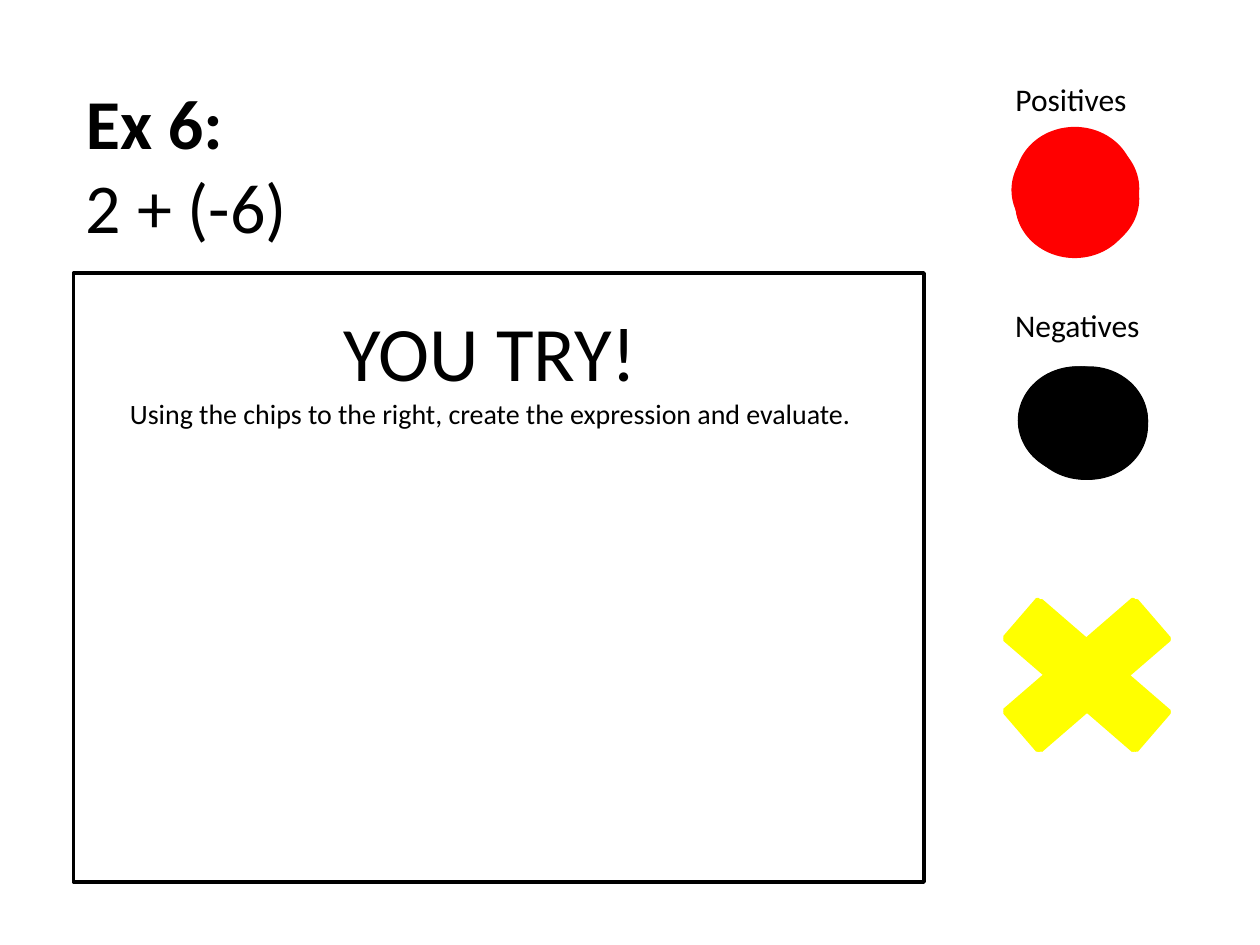
from dataclasses import dataclass
from typing import NamedTuple

from pptx import Presentation
from pptx.dml.color import RGBColor as Rgb
from pptx.enum.shapes import MSO_SHAPE as Kind
from pptx.enum.text import PP_ALIGN as Align
from pptx.util import Inches, Pt

CELL = 1 / 12  # inches: the slide is a grid of 120 columns by 90 rows


@dataclass(frozen=True)
class Theme:
    font: str = "Calibri"
    ink: str = "000000"
    plus: str = "FF0000"
    minus: str = "000000"
    cross: str = "FFFF00"
    line: int = 2
    head: int = 40
    call: int = 44
    label: int = 18
    note: int = 16


class Box(NamedTuple):
    """A rectangle in grid cells."""
    x: float
    y: float
    w: float
    h: float

    def inner(self, x, y, w, h):
        return Box(self.x + x, self.y + y, w, h)

    def shift(self, x, y):
        """Move by hundredths of an inch."""
        return self.inner(x / 100 / CELL, y / 100 / CELL, self.w, self.h)

    def emu(self):
        return [Inches(n * CELL) for n in self]


THEME = Theme()
# Strays of each stacked piece from its pile's corner, in hundredths of an inch
REDS = [(3, 14), (7, 14), (6, 7), (3, 0), (3, 10), (7, 6),
        (5, 10), (3, 18), (3, 17), (5, 11), (0, 7), (2, 9)]
BLACKS = [(7, 1), (2, 0), (0, 0), (9, 4), (6, 4), (9, 1), (9, 0), (2, 1)]
CROSSES = [(3, 1), (3, 2), (1, 2), (0, 0), (0, 2)]


def add_text(slide, box, lines, align=Align.LEFT):
    """Write lines of (words, size, bold), one paragraph each."""
    frame = slide.shapes.add_textbox(*box.emu()).text_frame
    frame.word_wrap = True
    for i, (words, size, bold) in enumerate(lines):
        para = frame.add_paragraph() if i else frame.paragraphs[0]
        para.text = words
        para.alignment = align
        font = para.font
        font.name, font.size, font.bold = THEME.font, Pt(size), bold
        font.color.rgb = Rgb.from_string(THEME.ink)


def add_form(slide, kind, box, line, fill=None):
    form = slide.shapes.add_shape(kind, *box.emu())
    form.shadow.inherit = False
    form.line.color.rgb = Rgb.from_string(line)
    form.line.width = Pt(THEME.line)
    if fill:
        form.fill.solid()
        form.fill.fore_color.rgb = Rgb.from_string(fill)
    else:
        form.fill.background()
    return form


def add_pile(slide, kind, box, color, strays):
    """Stack pieces that can be dragged off one by one."""
    return [add_form(slide, kind, box.shift(*stray), color, color)
            for stray in strays]


def add_head(slide, box):
    add_text(slide, box, [("Ex 6:", THEME.head, True),
                          ("2 + (-6)", THEME.head, False)])


def add_board(slide, box):
    add_form(slide, Kind.RECTANGLE, box, THEME.ink)
    note = "Using the chips to the right, create the expression and evaluate."
    add_text(slide, box.inner(1.2, 2.4, box.w - 4, 25.8),
             [("YOU TRY!", THEME.call, False), (note, THEME.note, False)],
             Align.CENTER)


def add_chips(slide, box, name, color, strays, drop):
    """Put a label above its pile, which starts drop rows below the top."""
    add_text(slide, box.inner(0, 0, box.w, 4.8),
             [(name, THEME.label, False)], Align.CENTER)
    add_pile(slide, Kind.OVAL, box.inner(box.w / 4, drop, 11, 10),
             color, strays)


def add_marks(slide, box):
    for mark in add_pile(slide, Kind.MATH_MULTIPLY, box,
                         THEME.cross, CROSSES):
        mark.adjustments[0] = 0.235


def main():
    deck = Presentation()
    deck.slide_width, deck.slide_height = Inches(10), Inches(7.5)
    slide = deck.slides.add_slide(deck.slide_layouts[6])
    add_head(slide, Box(7, 7, 68.5, 17.4))
    add_board(slide, Box(7, 26, 81, 58))
    add_chips(slide, Box(91, 7, 22, 17), "Positives",
              THEME.plus, REDS, 5.25)
    add_chips(slide, Box(91.6, 28.6, 22, 17), "Negatives",
              THEME.minus, BLACKS, 6.45)
    add_marks(slide, Box(91.6, 54, 23.5, 20.3))
    deck.save("out.pptx")


if __name__ == "__main__":
    main()
